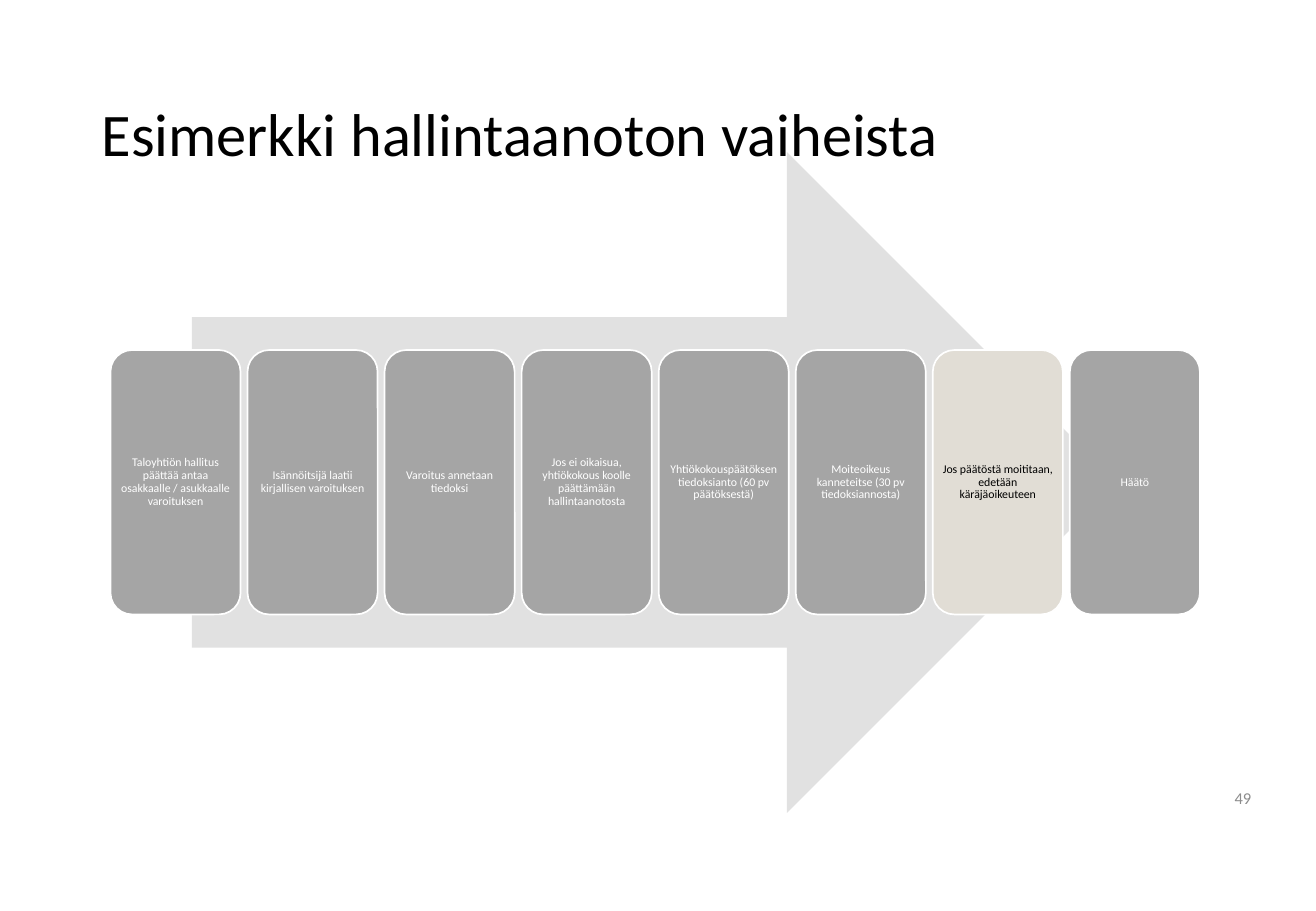
from dataclasses import dataclass

from pptx import Presentation
from pptx import util as u
from pptx.dml import color
from pptx.enum import shapes, text


@dataclass(frozen=True)
class Theme:
    font: str = "Calibri"
    ink: str = "000000"
    paper: str = "FFFFFF"
    arrow: str = "E1E1E1"
    step: str = "A5A5A5"
    highlight: str = "E1DDD5"
    number: str = "8C8C8C"
    title_size: float = 35.8
    step_size: float = 7
    number_size: float = 9.8


THEME = Theme()

STEPS = [
    "Taloyhtiön hallitus päättää antaa osakkaalle / asukkaalle varoituksen",
    "Isännöitsijä laatii kirjallisen varoituksen",
    "Varoitus annetaan tiedoksi",
    "Jos ei oikaisua, yhtiökokous koolle päättämään hallintaanotosta",
    "Yhtiökokouspäätöksen tiedoksianto (60 pv päätöksestä)",
    "Moiteoikeus kanneteitse (30 pv tiedoksiannosta)",
    "Jos päätöstä moititaan, edetään käräjäoikeuteen",
    "Häätö",
]
HIGHLIGHTED = 6
FIRST_LEFT, STEP_PITCH = 2.31, 2.865


def cm_box(*lengths):
    return [u.Cm(length) for length in lengths]


def write(shape, words, size, ink, align, spacing=1.0):
    frame = shape.text_frame
    frame.word_wrap = True
    frame.vertical_anchor = text.MSO_ANCHOR.MIDDLE
    para = frame.paragraphs[0]
    para.text = words
    para.alignment = align
    para.line_spacing = spacing
    para.font.name = THEME.font
    para.font.size = u.Pt(size)
    para.font.color.rgb = color.RGBColor.from_string(ink)


def add_label(page, box, *style):
    write(page.shapes.add_textbox(*cm_box(*box)), *style)


def add_block(page, kind, box, fill):
    block = page.shapes.add_shape(kind, *cm_box(*box))
    block.shadow.inherit = False
    block.fill.solid()
    block.fill.fore_color.rgb = color.RGBColor.from_string(fill)
    block.line.fill.background()
    return block


def add_step(page, index, words):
    active = index == HIGHLIGHTED
    fill, ink = (THEME.highlight, THEME.ink) if active else (THEME.step, THEME.paper)
    box = (FIRST_LEFT + index * STEP_PITCH, 7.32, 2.72, 5.53)
    card = add_block(page, shapes.MSO_SHAPE.ROUNDED_RECTANGLE, box, fill)
    card.line.color.rgb = color.RGBColor.from_string(THEME.paper)
    card.line.width = u.Pt(1)
    frame = card.text_frame
    frame.margin_left = frame.margin_right = u.Cm(0.06)
    frame.margin_top = frame.margin_bottom = u.Cm(0.06)
    write(card, words, THEME.step_size, ink, text.PP_ALIGN.CENTER, 0.9)


def main():
    deck = Presentation()
    deck.slide_width, deck.slide_height = u.Cm(27.51), u.Cm(19.05)
    page = deck.slides.add_slide(deck.slide_layouts[6])
    add_label(page, (1.88, 1.02, 23.72, 3.68), "Esimerkki hallintaanoton vaiheista",
              THEME.title_size, THEME.ink, text.PP_ALIGN.LEFT, 0.9)
    add_block(page, shapes.MSO_SHAPE.RIGHT_ARROW, (4.01, 3.18, 19.35, 13.82), THEME.arrow)
    for index, words in enumerate(STEPS):
        add_step(page, index, words)
    add_label(page, (24.71, 16.33, 1.7, 0.71), "49",
              THEME.number_size, THEME.number, text.PP_ALIGN.RIGHT)
    deck.save("out.pptx")


if __name__ == "__main__":
    main()
